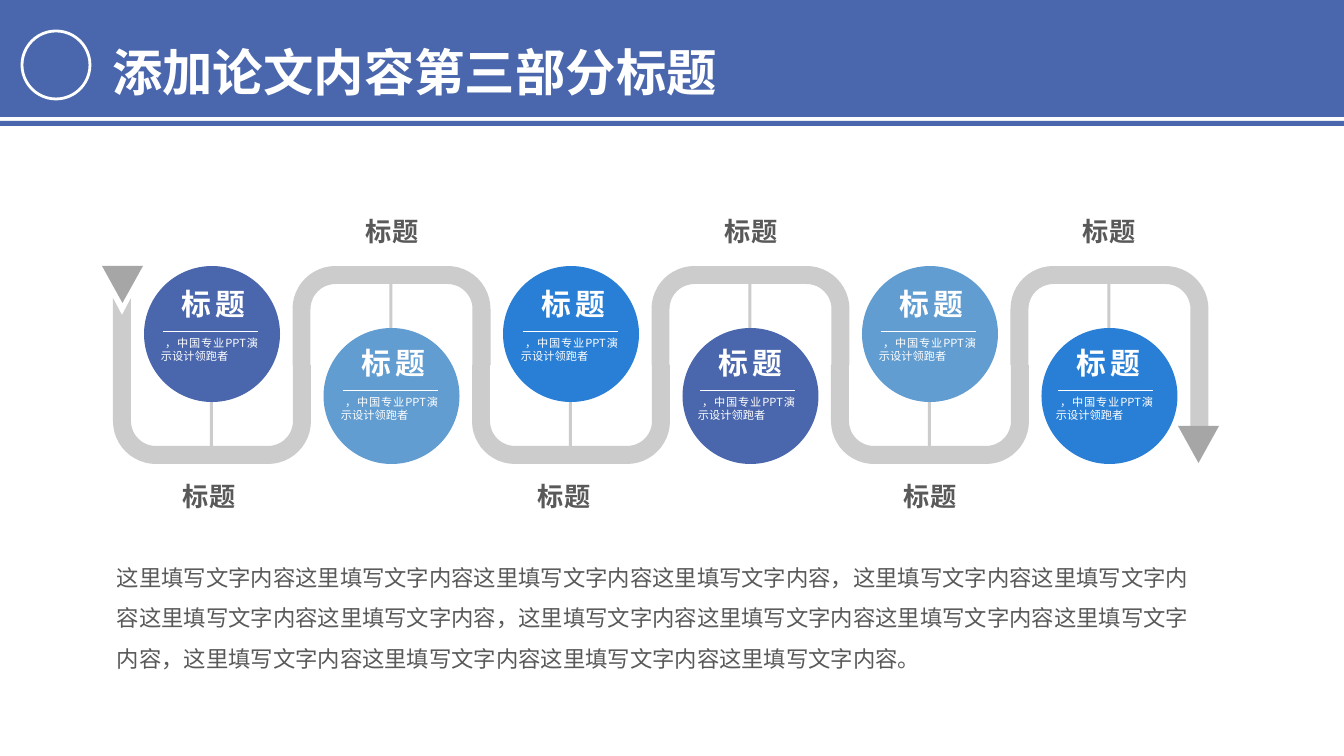
"""Build the section-three slide: a winding ribbon linking six titled circles."""
from dataclasses import dataclass
from math import cos, pi, sin

from pptx import Presentation
from pptx.dml.color import RGBColor
from pptx.enum.shapes import MSO_CONNECTOR, MSO_SHAPE
from pptx.enum.text import MSO_ANCHOR, MSO_AUTO_SIZE, PP_ALIGN
from pptx.oxml.ns import qn
from pptx.util import Pt
from lxml import etree

RECT, OVAL, MERGE = MSO_SHAPE.RECTANGLE, MSO_SHAPE.OVAL, MSO_SHAPE.FLOWCHART_MERGE
LEFT, CENTER, JUSTIFY = PP_ALIGN.LEFT, PP_ALIGN.CENTER, PP_ALIGN.JUSTIFY


@dataclass(frozen=True)
class Theme:
    font: str = "Noto Sans CJK SC"
    navy: str = "4A66AC"
    sky: str = "629DD1"
    azure: str = "297FD5"
    ribbon: str = "CCCCCC"
    tip: str = "A6A6A6"
    ink: str = "595959"
    white: str = "FFFFFF"
    heading_size: float = 36
    step_size: float = 21.3
    caption_size: float = 18.7
    summary_size: float = 16
    detail_size: float = 8


THEME = Theme()
HEADING = "添加论文内容第三部分标题"
CLAUSE = "这里填写文字内容" * 4
SUMMARY = "，".join([CLAUSE] * 4) + "。"
DETAIL = " ，中国专业PPT演示设计领跑者"
# title, circle colour, title left, caption, caption left
STEPS = [
    ("标题", THEME.navy, 168, "标题", 173),
    ("标题", THEME.sky, 348, "标题", 356),
    ("标题", THEME.azure, 528, "标题", 528),
    ("标题", THEME.navy, 705, "标题", 715),
    ("标题", THEME.sky, 886, "标题", 894),
    ("标题", THEME.azure, 1063, "标题", 1073),
]
BANDS = [(0, 117), (121, 5)]
TIPS = [(102, 266), (1178, 426)]

SLIDE_WIDTH, SLIDE_HEIGHT = 1344, 756
SCALE = 914400 / 100.8
PITCH = 359 / 2
CIRCLE_LEFT, CIRCLE_SIZE = 144, 136
RIBBON_LEFT, RIBBON_WIDTH, THICKNESS = 113, 198, 18
RIBBON_TOP, RIBBON_MIDDLE, RIBBON_BOTTOM = 266, 365, 464
OUTER_RADIUS, INNER_RADIUS, ARC_STEPS = 43, 25, 12
NOTCH_SHOULDER, NOTCH_POINT, RIBBON_END = 298, 315, 435


def px(length):
    return round(length * SCALE)


def rgb(code):
    return RGBColor.from_string(code)


def paint(shape, fill):
    shape.shadow.inherit = False
    shape.fill.solid()
    shape.fill.fore_color.rgb = rgb(fill)
    shape.line.fill.background()
    return shape


def add_block(shapes, kind, left, top, width, height, fill):
    return paint(shapes.add_shape(kind, px(left), px(top), px(width), px(height)), fill)


def write(box, text, size, color, bold=False, align=LEFT, wrap=True, spacing=None, tracking=None):
    frame = box.text_frame
    frame.auto_size = MSO_AUTO_SIZE.NONE
    frame.word_wrap = wrap
    frame.vertical_anchor = MSO_ANCHOR.TOP
    frame.text = text
    paragraph = frame.paragraphs[0]
    paragraph.alignment = align
    if spacing:
        paragraph.line_spacing = spacing
    font = paragraph.font
    font.name, font.size, font.bold = THEME.font, Pt(size), bold
    font.color.rgb = rgb(color)
    defaults = paragraph._p.get_or_add_pPr().get_or_add_defRPr()
    etree.SubElement(defaults, qn("a:ea")).set("typeface", THEME.font)
    if tracking:
        paragraph.runs[0]._r.get_or_add_rPr().set("spc", str(tracking * 100))


def add_text(shapes, left, top, width, height, *content, **style):
    write(shapes.add_textbox(px(left), px(top), px(width), px(height)), *content, **style)


def add_rule(shapes, left, top, width):
    rule = shapes.add_connector(MSO_CONNECTOR.STRAIGHT, px(left), px(top), px(left + width), px(top))
    rule.line.color.rgb = rgb(THEME.white)
    rule.line.width = Pt(0.5)
    etree.SubElement(rule._element.spPr, qn("a:effectLst"))


def bend(left, right, edge, radius, inward):
    """Return the points of two rounded corners, from the left leg to the right leg."""
    angles = [pi / 2 * step / ARC_STEPS for step in range(ARC_STEPS + 1)]
    center_y = edge + inward * radius
    first = [(left + radius - radius * cos(a), center_y - inward * radius * sin(a)) for a in angles]
    return first + [(left + right - x, y) for x, y in reversed(first)]


def add_arch(shapes, index):
    upper, first, last = index % 2 == 1, index == 0, index == len(STEPS) - 1
    left = RIBBON_LEFT + index * PITCH
    right = left + RIBBON_WIDTH
    edge, inward = (RIBBON_TOP, 1) if upper else (RIBBON_BOTTOM, -1)
    start = NOTCH_SHOULDER if first else RIBBON_MIDDLE
    end = RIBBON_END if last else RIBBON_MIDDLE
    outer = bend(left, right, edge, OUTER_RADIUS, inward)
    inner = bend(left + THICKNESS, right - THICKNESS, edge + inward * THICKNESS, INNER_RADIUS, inward)
    outline = [(left, start), *outer, (right, end), (right - THICKNESS, end),
               *reversed(inner), (left + THICKNESS, start)]
    if first:
        outline.append((left + THICKNESS / 2, NOTCH_POINT))
    points = [(px(x), px(y)) for x, y in outline]
    builder = shapes.build_freeform(*points[0])
    builder.add_line_segments(points[1:], close=True)
    paint(builder.convert_to_shape(), THEME.ribbon)


def add_step(shapes, index, title, color, title_left, caption, caption_left):
    lower = index % 2 == 1
    circle_left = CIRCLE_LEFT + index * PITCH
    circle_top, stem_top, title_top, caption_top = (328, 280, 340, 210) if lower else (266, 392, 281, 475)
    rule_top = title_top + 50
    add_block(shapes, RECT, circle_left + CIRCLE_SIZE / 2 - 2, stem_top, 3, 57, THEME.ribbon)
    add_block(shapes, OVAL, circle_left, circle_top, CIRCLE_SIZE, CIRCLE_SIZE, color)
    add_text(shapes, title_left, title_top, 90, 46, title, THEME.step_size, THEME.white,
             bold=True, align=CENTER, wrap=False, tracking=3)
    add_text(shapes, title_left - 17, rule_top, 117, 37, DETAIL, THEME.detail_size, THEME.white,
             align=JUSTIFY)
    add_rule(shapes, title_left - 5, rule_top, 95)
    add_text(shapes, caption_left, caption_top, 73, 42, caption, THEME.caption_size, THEME.ink,
             bold=True, wrap=False)


def add_header(slide):
    shapes = slide.shapes
    for top, height in BANDS:
        add_block(shapes, RECT, 0, top, SLIDE_WIDTH, height, THEME.navy)
    ring = add_block(shapes, OVAL, 22, 31, 68, 68, THEME.navy)
    ring.line.color.rgb = rgb(THEME.white)
    ring.line.width = Pt(2)
    heading = shapes.title
    heading.left, heading.top, heading.width, heading.height = map(px, (102, 6, 629, 102))
    write(heading, HEADING, THEME.heading_size, THEME.white, bold=True, spacing=1.5)
    shapes._spTree.append(heading._element)


def main():
    deck = Presentation()
    deck.slide_width, deck.slide_height = px(SLIDE_WIDTH), px(SLIDE_HEIGHT)
    slide = deck.slides.add_slide(deck.slide_layouts[5])
    shapes = slide.shapes
    add_header(slide)
    for index in range(len(STEPS)):
        add_arch(shapes, index)
    for left, top in TIPS:
        add_block(shapes, MERGE, left, top, 41, 37, THEME.tip)
    for index, step in enumerate(STEPS):
        add_step(shapes, index, *step)
    add_text(shapes, 107, 546, 1113, 132, SUMMARY, THEME.summary_size, THEME.ink, spacing=1.5)
    deck.save("out.pptx")


if __name__ == "__main__":
    main()
